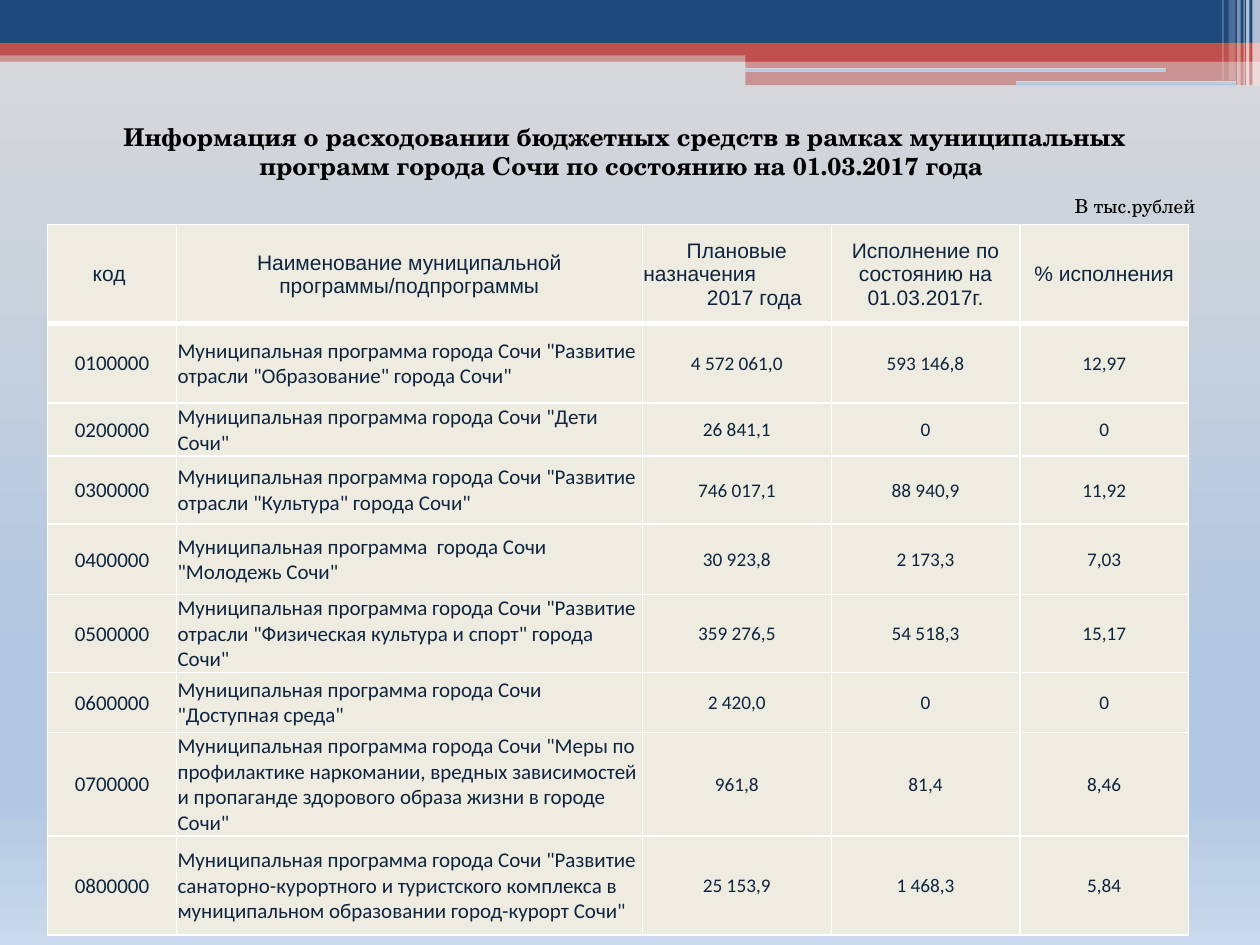
from lxml import etree
from pptx import Presentation
from pptx.dml.color import RGBColor
from pptx.enum.shapes import MSO_SHAPE
from pptx.enum.text import MSO_ANCHOR, PP_ALIGN
from pptx.oxml.ns import qn
from pptx.util import Pt

RECT, ROUNDED = MSO_SHAPE.RECTANGLE, MSO_SHAPE.ROUNDED_RECTANGLE
MIDDLE = MSO_ANCHOR.MIDDLE
LEFT, CENTER = PP_ALIGN.LEFT, PP_ALIGN.CENTER

NAVY = RGBColor(0x1F, 0x49, 0x7D)
RED = RGBColor(0xC0, 0x50, 0x4D)
WHITE = RGBColor(0xFF, 0xFF, 0xFF)
BLACK = RGBColor(0, 0, 0)
CREAM = RGBColor(0xEE, 0xEC, 0xE1)
INK = RGBColor(0x0F, 0x24, 0x3E)
GREY = RGBColor(0xD9, 0xD9, 0xD9)
SKY = RGBColor(0xB0, 0xC6, 0xE1)
PALE = RGBColor(0xCA, 0xD9, 0xEB)
BACKDROP = [(0, GREY), (74, SKY), (83, SKY), (100, PALE)]

SERIF, SANS, BODY = "TeX Gyre Schola", "Arial", "Calibri"

BANDS = [
    (0, 28.8, 720, 6.5, RED, 50),
    (0, 0, 720, 24.5, NAVY, 100),
    (0, 24.5, 720, 7.2, RED, 100),
    (426, 28, 294, 7.2, RED, 100),
    (426, 34.5, 294, 14.2, RED, 50),
]
SLITS = [(425.5, 38.8, 241.2, 2.2), (580.4, 46.2, 126, 2.6)]
STRIPES = [
    (715.7, 4.3, 49, 65),
    (712, 2, 49, 65),
    (710.6, 0.7, 49, 60),
    (707, 2, 49, 40),
    (702, 4, 46, 20),
    (698.5, 0.7, 46, 30),
]

COLUMN_WIDTHS = [73.7, 266.2, 108, 107.7, 96.5]
ROW_HEIGHTS = [56.6, 45.6, 30.3, 38.8, 40.4, 44.3, 34.2, 59, 56.8]
HEADINGS = [
    "код ",
    "Наименование муниципальной программы/подпрограммы",
    "Плановые\nназначения\n2017 года",
    "Исполнение по состоянию на 01.03.2017г.",
    "% исполнения",
]
PROGRAMS = [
    ("0100000", 'города Сочи "Развитие отрасли "Образование" города Сочи"', "4 572 061,0", "593 146,8", "12,97"),
    ("0200000", 'города Сочи "Дети Сочи"', "26 841,1", "0", "0"),
    ("0300000", 'города Сочи "Развитие отрасли "Культура" города Сочи"', "746 017,1", "88 940,9", "11,92"),
    ("0400000", ' города Сочи "Молодежь Сочи"', "30 923,8", "2 173,3", "7,03"),
    ("0500000", 'города Сочи "Развитие отрасли "Физическая культура и спорт" города Сочи"',
     "359 276,5", "54 518,3", "15,17"),
    ("0600000", 'города Сочи "Доступная среда"', "2 420,0", "0", "0"),
    ("0700000", 'города Сочи "Меры по профилактике наркомании, вредных зависимостей и пропаганде '
     'здорового образа жизни в городе Сочи"', "961,8", "81,4", "8,46"),
    ("0800000", 'города Сочи "Развитие санаторно-курортного и туристского комплекса в муниципальном '
     'образовании город-курорт Сочи"', "25 153,9", "1 468,3", "5,84"),
]


def set_backdrop(fill, owner):
    """Fill with the vertical backdrop gradient."""
    fill.gradient()
    fill.gradient_angle = 270
    stops = owner.find(".//" + qn("a:gsLst"))
    for stop in list(stops):
        stops.remove(stop)
    for position, color in BACKDROP:
        stop = etree.SubElement(stops, qn("a:gs"), pos=str(position * 1000))
        etree.SubElement(stop, qn("a:srgbClr"), val=str(color))


def add_block(slide, kind, left, top, width, height):
    """Add a shape without outline or shadow."""
    block = slide.shapes.add_shape(kind, Pt(left), Pt(top), Pt(width), Pt(height))
    block.shadow.inherit = False
    block.line.fill.background()
    return block


def add_band(slide, left, top, width, height, color, opacity):
    """Add a solid rectangle with the given opacity in percent."""
    band = add_block(slide, RECT, left, top, width, height)
    band.fill.solid()
    band.fill.fore_color.rgb = color
    if opacity < 100:
        tint = band.element.spPr.find(".//" + qn("a:srgbClr"))
        etree.SubElement(tint, qn("a:alpha"), val=str(opacity * 1000))


def add_header(slide):
    """Draw the flag-like header decoration."""
    for band in BANDS:
        add_band(slide, *band)
    for slit_box in SLITS:
        slit = add_block(slide, ROUNDED, *slit_box)
        set_backdrop(slit.fill, slit.element)
    for left, width, height, opacity in STRIPES:
        add_band(slide, left, 0, width, height, WHITE, opacity)


def format_paragraph(paragraph, font, size, color, align, bold=False):
    """Apply alignment to a paragraph and a font to its runs."""
    paragraph.alignment = align
    for run in paragraph.runs:
        run.font.name = font
        run.font.size = Pt(size)
        run.font.bold = bold
        run.font.color.rgb = color


def add_caption(slide, text, left, top, width, height, size, align, bold=False):
    """Add a serif text box."""
    frame = slide.shapes.add_textbox(Pt(left), Pt(top), Pt(width), Pt(height)).text_frame
    frame.word_wrap = True
    frame.text = text
    format_paragraph(frame.paragraphs[0], SERIF, size, BLACK, align, bold)


def set_borders(cell, top, bottom):
    """Give a cell white borders of one point at the sides."""
    properties = cell._tc.get_or_add_tcPr()
    sides = [("a:lnL", 1), ("a:lnR", 1), ("a:lnT", top), ("a:lnB", bottom)]
    for index, (tag, width) in enumerate(sides):
        border = etree.Element(qn(tag), w=str(Pt(width)))
        fill = etree.SubElement(border, qn("a:solidFill"))
        etree.SubElement(fill, qn("a:srgbClr"), val=str(WHITE))
        properties.insert(index, border)


def fill_cell(cell, text, font, size, align, top=1, bottom=1):
    """Write and style one table cell."""
    cell.margin_left = cell.margin_right = cell.margin_top = Pt(0.6)
    cell.margin_bottom = Pt(0)
    cell.vertical_anchor = MIDDLE
    cell.fill.solid()
    cell.fill.fore_color.rgb = CREAM
    set_borders(cell, top, bottom)
    cell.text_frame.text = text
    for paragraph in cell.text_frame.paragraphs:
        format_paragraph(paragraph, font, size, INK, align)


def add_program_table(slide):
    """Add the table of spending by programme."""
    table = slide.shapes.add_table(
        len(ROW_HEIGHTS), len(COLUMN_WIDTHS), Pt(27.2), Pt(128.2),
        Pt(sum(COLUMN_WIDTHS)), Pt(sum(ROW_HEIGHTS))).table
    for column, width in zip(table.columns, COLUMN_WIDTHS):
        column.width = Pt(width)
    for row, height in zip(table.rows, ROW_HEIGHTS):
        row.height = Pt(height)
    for column, heading in enumerate(HEADINGS):
        fill_cell(table.cell(0, column), heading, SANS, 12, CENTER, bottom=3)
    _, assignments, year = table.cell(0, 2).text_frame.paragraphs
    assignments.alignment = LEFT
    year._p.get_or_add_pPr().set("marL", str(Pt(20)))
    for row, (code, program, *amounts) in enumerate(PROGRAMS, start=1):
        top = 3 if row == 1 else 1
        fill_cell(table.cell(row, 0), code, BODY, 12, CENTER, top)
        fill_cell(table.cell(row, 1), f"Муниципальная программа {program}", BODY, 12, LEFT, top)
        for column, amount in enumerate(amounts, start=2):
            fill_cell(table.cell(row, column), amount, BODY, 11, CENTER, top)


def main():
    """Build and save the budget slide."""
    deck = Presentation()
    deck.slide_width, deck.slide_height = Pt(720), Pt(540)
    slide = deck.slides.add_slide(deck.slide_layouts[6])
    set_backdrop(slide.background.fill, slide.element)
    add_header(slide)
    add_program_table(slide)
    add_caption(slide, "Информация о расходовании бюджетных средств в рамках муниципальных "
                "программ города Сочи по состоянию на 01.03.2017 года ",
                36.7, 66.2, 640.8, 41, 14, CENTER, bold=True)
    add_caption(slide, "В тыс.рублей", 607, 107.3, 113, 20.9, 11, LEFT)
    deck.save("out.pptx")


if __name__ == "__main__":
    main()
